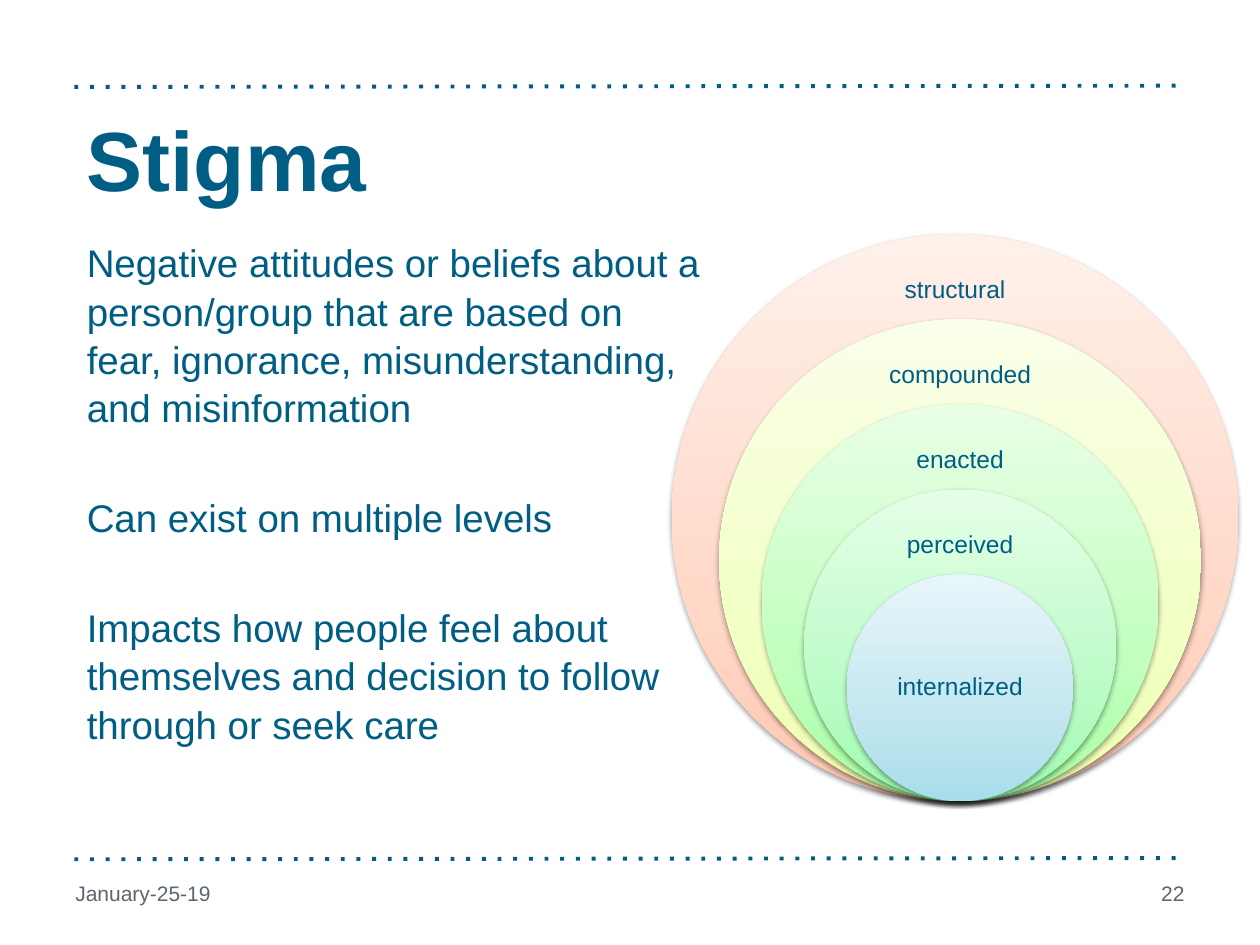
"""Build the Stigma slide: three statements beside five nested circles."""
from dataclasses import dataclass

from lxml.etree import SubElement
from pptx import Presentation
from pptx.dml.color import RGBColor
from pptx.enum.shapes import MSO_CONNECTOR as Link, MSO_SHAPE as Shape
from pptx.enum.text import MSO_ANCHOR as Anchor, PP_ALIGN as Align
from pptx.oxml import parse_xml
from pptx.oxml.ns import nsdecls, qn
from pptx.util import Pt


@dataclass(frozen=True)
class Theme:
    ink: str = "005E85"
    grey: str = "5C6670"
    font: str = "Arial"
    title: int = 48
    body: int = 22
    label: int = 14
    foot: int = 12


THEME = Theme()
PX = 9144
SIZE = (1000, 750)
TITLE = "Stigma"
POINTS = [
    "Negative attitudes or beliefs about a person/group that are based on "
    "fear, ignorance, misunderstanding, and misinformation",
    "Can exist on multiple levels",
    "Impacts how people feel about themselves and decision to follow "
    "through or seek care",
]
RINGS = [
    ("structural", 758, 169, ("FFC8B1", "FFD8C8", "FFF0EA")),
    ("compounded", 762, 165, ("EEFFAD", "F2FFC5", "FAFFE9")),
    ("enacted", 762, 163, ("A8FFA3", "C2FFBE", "E8FFE6")),
    ("perceived", 762, 134, ("9DFCAE", "BBFBC6", "E4FFE8")),
    ("internalized", 762, 127, ("A6DEEA", "C2E6EF", "E7F6FA")),
]
STOPS = (0, 35, 100)
OUTER, BASE, SHRINK = 450, 636, 0.15
FOOT = [("January-25-19", 50, Align.LEFT), ("22", 717, Align.RIGHT)]
RULES = (69, 682)


def emu(*nums):
    return [round(n * PX) for n in nums]


def add_text(slide, box, lines, size, color=THEME.ink, bold=False,
             align=Align.LEFT, anchor=Anchor.MIDDLE, inset=None,
             pitch=None, gap=0):
    frame = slide.shapes.add_textbox(*emu(*box)).text_frame
    frame.word_wrap = True
    frame.vertical_anchor = anchor
    if inset is not None:
        pad = emu(inset)[0]
        frame.margin_left = frame.margin_right = pad
        frame.margin_top = frame.margin_bottom = pad
    for i, line in enumerate(lines):
        para = frame.add_paragraph() if i else frame.paragraphs[0]
        para.alignment = align
        para.line_spacing = pitch
        para.space_before = Pt(gap if i else 0)
        run = para.add_run()
        run.text = line
        font = run.font
        font.name, font.size, font.bold = THEME.font, Pt(size), bold
        font.color.rgb = RGBColor.from_string(color)


def add_rule(slide, top):
    rule = slide.shapes.add_connector(Link.STRAIGHT, *emu(59, top, 941, top - 1))
    rule.line.width = Pt(2.25)
    rule.line.color.rgb = RGBColor.from_string(THEME.ink)
    SubElement(rule.line._get_or_add_ln(), qn("a:prstDash"), val="dot")
    SubElement(rule._element.spPr, qn("a:effectLst"))


def add_ring(slide, box, colors):
    ring = slide.shapes.add_shape(Shape.OVAL, *emu(*box))
    ring.line.fill.background()
    stops = "".join(
        f'<a:gs pos="{pos * 1000}"><a:srgbClr val="{color}"/></a:gs>'
        for pos, color in zip(STOPS, colors))
    props = ring._element.spPr
    props.find(qn("a:prstGeom")).addnext(parse_xml(
        f'<a:gradFill {nsdecls("a")} rotWithShape="1"><a:gsLst>{stops}</a:gsLst>'
        '<a:lin ang="16200000" scaled="0"/></a:gradFill>'))
    props.append(parse_xml(
        f'<a:effectLst {nsdecls("a")}>'
        f'<a:outerShdw blurRad="{Pt(3.1)}" dist="{Pt(1.6)}" dir="5400000" '
        'rotWithShape="0"><a:srgbClr val="000000"><a:alpha val="38000"/>'
        '</a:srgbClr></a:outerShdw></a:effectLst>'))


def main():
    deck = Presentation()
    deck.slide_width, deck.slide_height = emu(*SIZE)
    slide = deck.slides.add_slide(deck.slide_layouts[6])
    for top in RULES:
        add_rule(slide, top)
    add_text(slide, (59, 183, 508, 492), POINTS, THEME.body,
             anchor=Anchor.TOP, pitch=1.05, gap=35)
    add_text(slide, (59, 83, 882, 84), [TITLE], THEME.title, bold=True)
    for i, (name, mid, width, colors) in enumerate(RINGS):
        side = OUTER * (1 - SHRINK * i)
        top = BASE - side
        add_ring(slide, (mid - side / 2, top, side, side), colors)
        last = i == len(RINGS) - 1
        drop, height = (side / 4, side / 2) if last else (22, 45)
        add_text(slide, (mid - width / 2, top + drop, width, height), [name],
                 THEME.label, align=Align.CENTER, inset=11, pitch=0.9)
    for text, left, align in FOOT:
        add_text(slide, (left, 689, 233, 40), [text], THEME.foot,
                 color=THEME.grey, align=align)
    deck.save("out.pptx")


if __name__ == "__main__":
    main()
